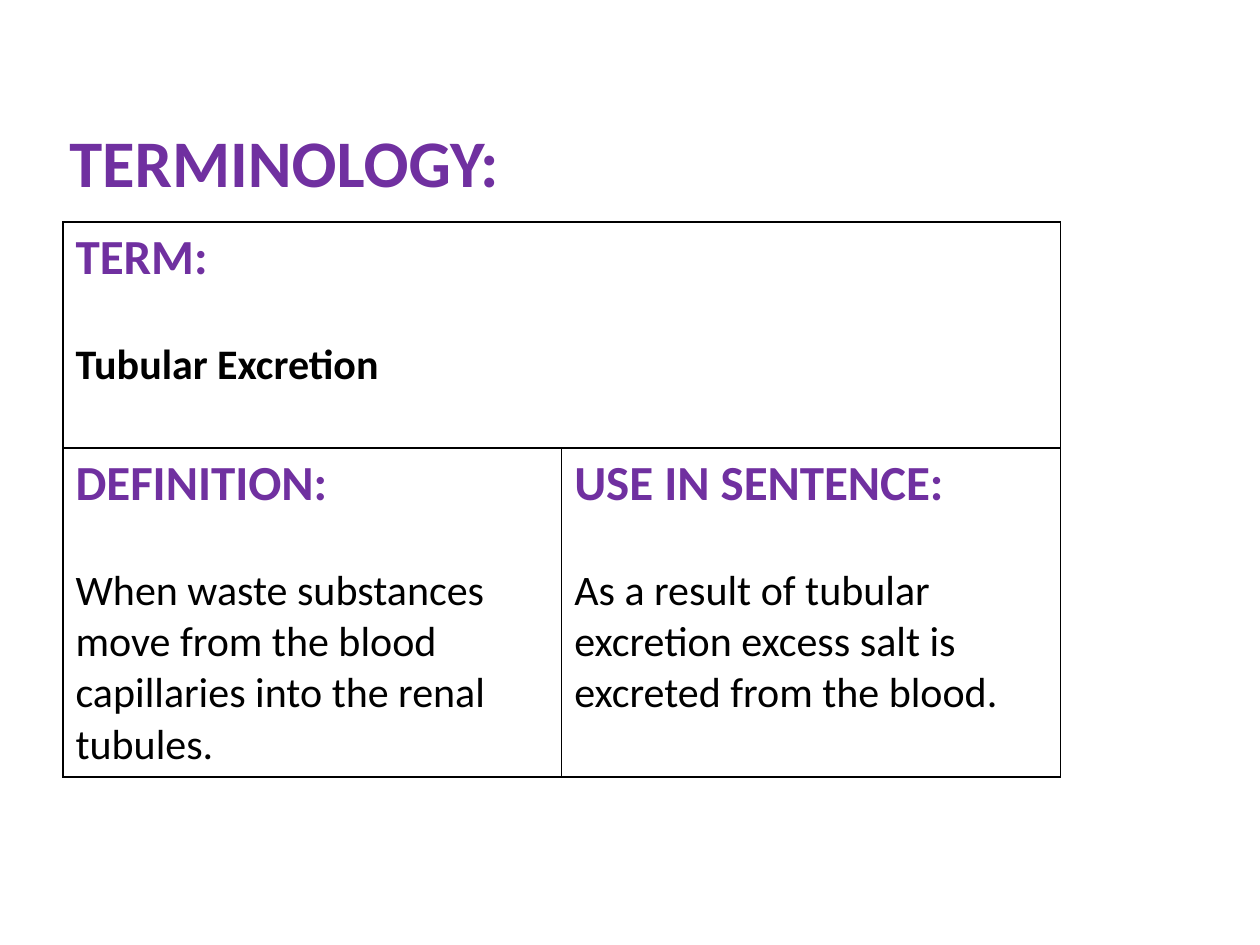
from lxml.etree import SubElement
from pptx import Presentation
from pptx.dml.color import RGBColor
from pptx.enum.text import MSO_ANCHOR
from pptx.oxml.ns import qn
from pptx.util import Pt

PURPLE = RGBColor(0x70, 0x30, 0xA0)
BLACK = RGBColor(0, 0, 0)
FONT = "Calibri"
BORDER_WIDTH = Pt(1)

TERM = ("TERM:", "Tubular Excretion")
DEFINITION = (
    "DEFINITION:",
    "When waste substances move from the blood capillaries into the renal tubules.",
)
SENTENCE = (
    "USE IN SENTENCE:",
    "As a result of tubular excretion excess salt is excreted from the blood.",
)


def format_text(paragraph, size, color, bold):
    for run in paragraph.runs:
        run.font.name = FONT
        run.font.size = Pt(size)
        run.font.bold = bold
        run.font.color.rgb = color


def add_borders(cell):
    properties = cell._tc.get_or_add_tcPr()
    for side in ("a:lnL", "a:lnR", "a:lnT", "a:lnB"):
        line = SubElement(properties, qn(side), w=str(BORDER_WIDTH))
        fill = SubElement(line, qn("a:solidFill"))
        SubElement(fill, qn("a:srgbClr"), val=str(BLACK))


def fill_entry(cell, entry, bold_body=False):
    heading_text, body_text = entry
    heading = cell.text_frame.paragraphs[0]
    heading.text = heading_text
    format_text(heading, 28, PURPLE, True)
    body = cell.text_frame.add_paragraph()
    body.text = body_text
    body.space_before = Pt(29.3)
    format_text(body, 24, BLACK, bold_body)


def add_title(slide, left, top, width, height):
    title = slide.shapes.add_textbox(left, top, width, height)
    frame = title.text_frame
    frame.word_wrap = True
    frame.vertical_anchor = MSO_ANCHOR.BOTTOM
    frame.margin_left = frame.margin_right = Pt(3.6)
    frame.margin_top = frame.margin_bottom = 0
    frame.text = "TERMINOLOGY:"
    format_text(frame.paragraphs[0], 38, PURPLE, True)


def add_term_table(slide, left, top, width, row_heights):
    table = slide.shapes.add_table(
        len(row_heights), 2, left, top, width, sum(row_heights)
    ).table
    table.first_row = False
    table.horz_banding = False
    for row, height in zip(table.rows, row_heights):
        row.height = height
    for cell in table.iter_cells():
        add_borders(cell)
        cell.fill.background()
    table.cell(0, 0).merge(table.cell(0, 1))
    fill_entry(table.cell(0, 0), TERM, bold_body=True)
    fill_entry(table.cell(1, 0), DEFINITION)
    fill_entry(table.cell(1, 1), SENTENCE)


def main():
    presentation = Presentation()
    presentation.slide_width = Pt(720)
    presentation.slide_height = Pt(540)
    slide = presentation.slides.add_slide(presentation.slide_layouts[6])
    left, width = Pt(36), Pt(570)
    add_title(slide, left, Pt(25), width, Pt(90))
    add_term_table(slide, left, Pt(126.8), width, (Pt(129.2), Pt(188)))
    presentation.save("out.pptx")


if __name__ == "__main__":
    main()
